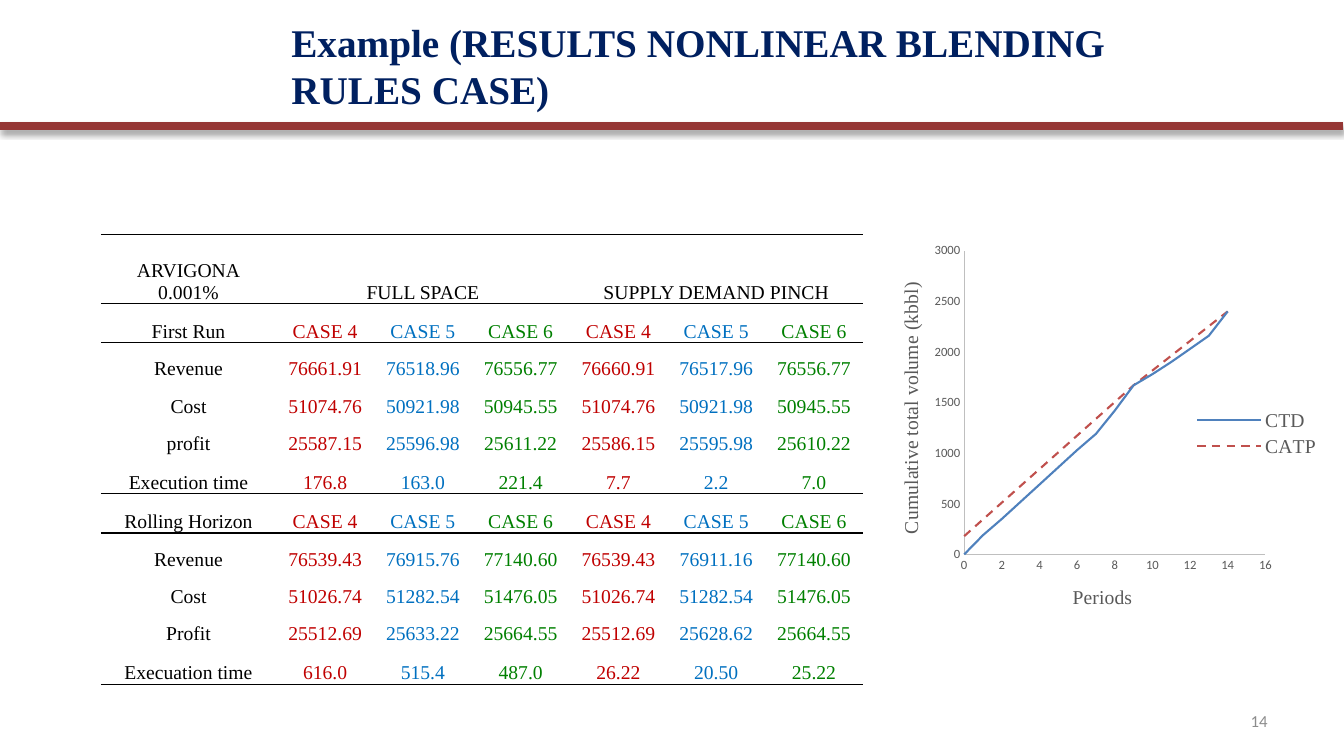
from lxml import etree
from pptx import Presentation
from pptx import util as u
from pptx.chart.data import XyChartData
from pptx.dml.color import RGBColor
from pptx.enum import chart as ch, dml, shapes, text
from pptx.oxml import parse_xml
from pptx.oxml.ns import nsdecls, qn

PX = 9144  # 100 px to the inch
SERIF, SANS = "Times New Roman", "Calibri"

BLACK = RGBColor(0x00, 0x00, 0x00)
NAVY = RGBColor(0x00, 0x20, 0x60)
MAROON = RGBColor(0x95, 0x37, 0x35)
RED = RGBColor(0xC0, 0x00, 0x00)
BLUE = RGBColor(0x00, 0x70, 0xC0)
GREEN = RGBColor(0x00, 0x80, 0x00)
PAGE_GRAY = RGBColor(0x8C, 0x8C, 0x8C)
LABEL_GRAY = RGBColor(0x59, 0x59, 0x59)
AXIS_GRAY = RGBColor(0xBF, 0xBF, 0xBF)
CTD_BLUE = RGBColor(0x4F, 0x81, 0xBD)
CATP_RED = RGBColor(0xC0, 0x50, 0x4D)

NO_STYLE = "{2D5ABB26-0587-4C30-8999-92F81FD0307C}"
CASES = ["CASE 4", "CASE 5", "CASE 6"] * 2
RESULTS = [
    ["First Run"] + CASES,
    ["Revenue", "76661.91", "76518.96", "76556.77", "76660.91", "76517.96", "76556.77"],
    ["Cost", "51074.76", "50921.98", "50945.55", "51074.76", "50921.98", "50945.55"],
    ["profit", "25587.15", "25596.98", "25611.22", "25586.15", "25595.98", "25610.22"],
    ["Execution time", "176.8", "163.0", "221.4", "7.7", "2.2", "7.0"],
    ["Rolling Horizon"] + CASES,
    ["Revenue", "76539.43", "76915.76", "77140.60", "76539.43", "76911.16", "77140.60"],
    ["Cost", "51026.74", "51282.54", "51476.05", "51026.74", "51282.54", "51476.05"],
    ["Profit", "25512.69", "25633.22", "25664.55", "25512.69", "25628.62", "25664.55"],
    ["Execuation time", "616.0", "515.4", "487.0", "26.22", "20.50", "25.22"],
]
COLUMN_COLORS = [BLACK] + [RED, BLUE, GREEN] * 2
ROW_HEIGHTS = [68] + [39, 37, 37, 37, 39] * 2
RULED_ROWS = (0, 1, 5, 6, 10)  # rows with a line below

CTD = [0, 190, 350, 520, 690, 860, 1030, 1190, 1420, 1670, 1780, 1900, 2030, 2160, 2400]
SERIES = [
    ("CTD", list(enumerate(CTD)), CTD_BLUE, None),
    ("CATP", [(0, 180), (9, 1670), (14, 2400)], CATP_RED, dml.MSO_LINE.DASH),
]


def px(*lengths):
    return [u.Emu(n * PX) for n in lengths]


def set_font(font, size=14, name=SERIF, color=BLACK, bold=False):
    font.size, font.name, font.bold = u.Pt(size), name, bold
    font.color.rgb = color


def write(tf, content, align=text.PP_ALIGN.CENTER, **fmt):
    """Fill a text frame, one paragraph for each line of content."""
    tf.word_wrap = True
    for i, line in enumerate(content.split("\n")):
        p = tf.paragraphs[0] if i == 0 else tf.add_paragraph()
        p.alignment = align
        r = p.add_run()
        r.text = line
        set_font(r.font, **fmt)


def add_header(s, x, y, w, h):
    # Title
    sp = s.shapes.title
    sp.left, sp.top, sp.width, sp.height = px(x + 279, y + 13, 837, 59)
    tf = sp.text_frame
    tf.auto_size = text.MSO_AUTO_SIZE.NONE
    tf.vertical_anchor = text.MSO_ANCHOR.TOP
    write(tf, "Example (RESULTS NONLINEAR BLENDING RULES CASE)",
          align=text.PP_ALIGN.LEFT, size=28, color=NAVY, bold=True)

    # Rule under the title, with a soft shadow
    rule = s.shapes.add_connector(shapes.MSO_CONNECTOR.STRAIGHT,
                                  *px(x, y + h, x + w, y + h))
    rule.line.color.rgb = MAROON
    rule.line.width = u.Pt(6)
    rule._element.spPr.append(parse_xml(
        f'<a:effectLst {nsdecls("a")}>'
        f'<a:outerShdw blurRad="{u.Pt(4)}" dist="{u.Pt(3)}" dir="5400000" rotWithShape="0">'
        '<a:srgbClr val="000000"><a:alpha val="40000"/></a:srgbClr>'
        '</a:outerShdw></a:effectLst>'))


def add_border(cell, side):
    ln = parse_xml(
        f'<a:{side} {nsdecls("a")} w="{u.Pt(1)}"><a:solidFill>'
        f'<a:srgbClr val="{BLACK}"/></a:solidFill></a:{side}>')
    tcPr = cell._tc.get_or_add_tcPr()
    tcPr.insert(len(tcPr.findall(qn("a:lnT"))), ln)


def add_results(s, x, y, w, h):
    header = ["ARVIGONA\n0.001%", "FULL SPACE", "", "", "SUPPLY DEMAND PINCH", "", ""]
    rows = [header] + RESULTS
    tbl = s.shapes.add_table(len(rows), len(header), *px(x, y, w, h)).table
    tbl.first_row = tbl.horz_banding = False
    tbl._tbl.tblPr.find(qn("a:tableStyleId")).text = NO_STYLE
    case_width = 97
    for i, col in enumerate(tbl.columns):
        col.width, = px(case_width if i else w - 6 * case_width)
    for row, height in zip(tbl.rows, ROW_HEIGHTS):
        row.height, = px(height)
    for first in (1, 4):
        tbl.cell(0, first).merge(tbl.cell(0, first + 2))

    for i, row in enumerate(rows):
        for j, content in enumerate(row):
            cell = tbl.cell(i, j)
            cell.fill.background()
            cell.vertical_anchor = text.MSO_ANCHOR.BOTTOM
            cell.margin_left, cell.margin_right, cell.margin_top, cell.margin_bottom = px(1, 1, 1, 0)
            if i == 0:
                add_border(cell, "lnT")
            if i in RULED_ROWS:
                add_border(cell, "lnB")
            if not cell.is_spanned:
                write(cell.text_frame, content, color=COLUMN_COLORS[j] if i else BLACK)


def set_layout(parent, index, **parts):
    """Place a chart part by fractions of the chart area."""
    old = parent.find(qn("c:layout"))
    if old is not None:
        parent.remove(old)
    layout = etree.Element(qn("c:layout"))
    manual = etree.SubElement(layout, qn("c:manualLayout"))
    for tag, val in parts.items():
        etree.SubElement(manual, qn(f"c:{tag}")).set("val", str(val))
    parent.insert(index, layout)


def format_axis(axis, title, top, step, left_pos, top_pos):
    axis.minimum_scale, axis.maximum_scale, axis.major_unit = 0, top, step
    axis.has_major_gridlines = False
    axis.major_tick_mark = axis.minor_tick_mark = ch.XL_TICK_MARK.NONE
    set_font(axis.tick_labels.font, size=9, name=SANS, color=LABEL_GRAY)
    axis.format.line.color.rgb = AXIS_GRAY
    axis.format.line.width = u.Pt(0.75)
    p = axis.axis_title.text_frame.paragraphs[0]
    r = p.add_run()
    r.text = title
    set_font(r.font, color=LABEL_GRAY)
    set_layout(axis.axis_title._element, 1, xMode="edge", yMode="edge",
               x=left_pos, y=top_pos)


def add_volume_chart(s, x, y, w, h):
    data = XyChartData()
    for name, points, _, _ in SERIES:
        series = data.add_series(name)
        for point in points:
            series.add_data_point(*point)
    chart = s.shapes.add_chart(ch.XL_CHART_TYPE.XY_SCATTER_LINES_NO_MARKERS,
                               *px(x, y, w, h), data).chart
    chart.has_title = False
    set_font(chart.font, size=10, name=SANS)
    plot = chart.plots[0]
    plot.vary_by_categories = False
    for series, (_, _, color, dash) in zip(plot.series, SERIES):
        series.smooth = False
        series.format.line.color.rgb = color
        series.format.line.width = u.Pt(1.5)
        if dash:
            series.format.line.dash_style = dash

    # Axes, legend and plot area
    format_axis(chart.category_axis, "Periods", 16, 2, 0.4, 0.87)
    format_axis(chart.value_axis, "Cumulative total volume (kbbl)", 3000, 500, 0, 0.11)
    chart.has_legend = True
    chart.legend.position = ch.XL_LEGEND_POSITION.RIGHT
    chart.legend.include_in_layout = False
    set_font(chart.legend.font, color=LABEL_GRAY)
    set_layout(chart._chartSpace.chart.plotArea, 0, layoutTarget="inner",
               xMode="edge", yMode="edge", x=0.16, y=0.04, w=0.69, h=0.765)


def add_page_number(s, x, y, w, h):
    tf = s.shapes.add_textbox(*px(x, y, w, h)).text_frame
    tf.vertical_anchor = text.MSO_ANCHOR.MIDDLE
    write(tf, "14", align=text.PP_ALIGN.RIGHT, size=12, name=SANS, color=PAGE_GRAY)


def main():
    prs = Presentation()
    prs.slide_width, prs.slide_height = px(1333, 750)
    s = prs.slides.add_slide(prs.slide_layouts[5])
    add_header(s, 0, 0, 1332, 125)
    add_results(s, 100, 233, 756, 448)
    add_volume_chart(s, 887, 233, 433, 394)
    add_page_number(s, 956, 695, 311, 40)
    prs.save("out.pptx")


if __name__ == "__main__":
    main()
